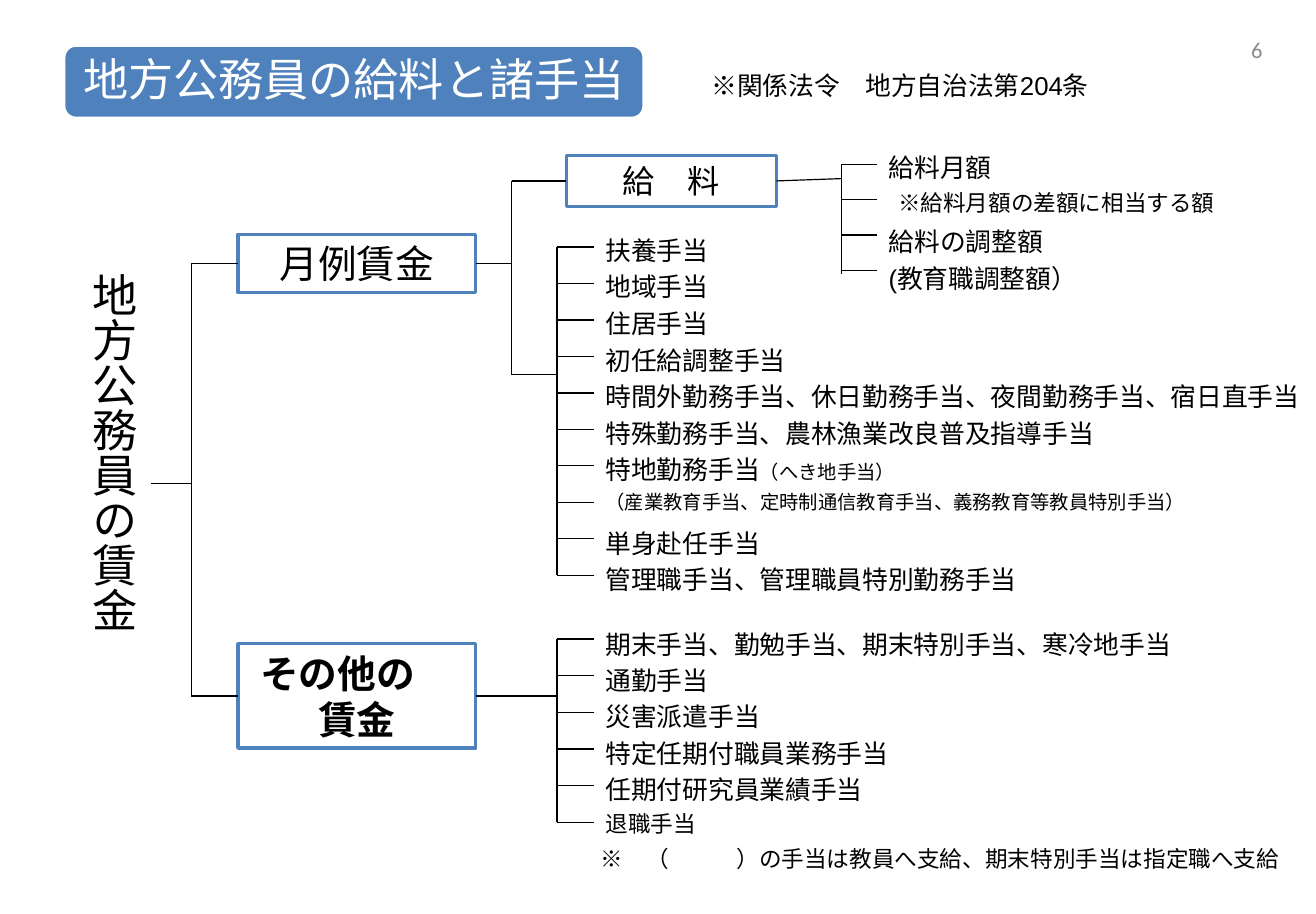
from dataclasses import dataclass
from typing import Optional

from lxml.etree import SubElement
from pptx import Presentation
from pptx.dml.color import RGBColor
from pptx.enum.shapes import MSO_CONNECTOR, MSO_SHAPE
from pptx.enum.text import MSO_ANCHOR, PP_ALIGN
from pptx.oxml.ns import qn
from pptx.shapes.autoshape import Shape
from pptx.shapes.connector import Connector
from pptx.slide import Slide
from pptx.util import Inches, Pt

BLACK = RGBColor(0x00, 0x00, 0x00)
WHITE = RGBColor(0xFF, 0xFF, 0xFF)
BLUE = RGBColor(0x4F, 0x81, 0xBD)
GRAY = RGBColor(0x8C, 0x8C, 0x8C)
LABEL_HEIGHTS = {16: 0.37, 14: 0.34, 12: 0.3}
LEFT, RIGHT = 1, 3


@dataclass(frozen=True)
class Label:
    text: str
    width: float
    size: int = 16
    indent: float = 0
    remark: str = ""


@dataclass(frozen=True)
class Branch:
    spine_x: float
    spine_end: float
    tick_end: float
    first_tick: float
    last_tick: float
    first_label: float
    last_label: float
    labels: tuple[Label, ...]


@dataclass(frozen=True)
class Category:
    text: str
    left: float
    top: float
    width: float
    height: float
    size: int
    bold: Optional[bool] = None

    @property
    def middle(self) -> float:
        return self.top + self.height / 2


BASE_PAY = Category("給　料", 4.88, 1.34, 1.81, 0.44, 20)
MONTHLY = Category("月例賃金", 2.05, 2.02, 2.05, 0.5, 24)
OTHER = Category("その他の　賃金", 2.05, 5.55, 2.05, 0.9, 24, True)

BRANCHES = (
    Branch(7.25, 2.36, 7.56, 1.42, 2.33, 1.26, 2.21, (
        Label("給料月額", 1.81),
        Label("※給料月額の差額に相当する額", 3.07, 14, 0.08),
        Label("給料の調整額", 1.81),
        Label("(教育職調整額）", 2.44),
    )),
    Branch(4.8, 4.96, 5.12, 2.13, 4.96, 1.97, 4.81, (
        Label("扶養手当", 3.53),
        Label("地域手当", 3.53),
        Label("住居手当", 3.53),
        Label("初任給調整手当", 3.53),
        Label("時間外勤務手当、休日勤務手当、夜間勤務手当、宿日直手当", 6.22),
        Label("特殊勤務手当、農林漁業改良普及指導手当", 6.22),
        Label("特地勤務手当", 5.98, remark="（へき地手当）"),
        Label("（産業教育手当、定時制通信教育手当、義務教育等教員特別手当）", 6.22, 12),
        Label("単身赴任手当", 1.81),
        Label("管理職手当、管理職員特別勤務手当", 5.67),
    )),
    Branch(4.8, 7.09, 5.12, 5.51, 7.09, 5.37, 6.93, (
        Label("期末手当、勤勉手当、期末特別手当、寒冷地手当", 5.75),
        Label("通勤手当", 1.81),
        Label("災害派遣手当", 1.81),
        Label("特定任期付職員業務手当", 3.15),
        Label("任期付研究員業績手当", 3.15),
        Label("退職手当", 1.81, 14),
    )),
)


def write(shape: Shape, text: str, size: int, color: RGBColor = BLACK,
          font: str = "Arial", bold: Optional[bool] = None,
          align: PP_ALIGN = PP_ALIGN.CENTER) -> None:
    """Append one run to the first paragraph of a shape."""
    frame = shape.text_frame
    frame.word_wrap = True
    frame.vertical_anchor = MSO_ANCHOR.MIDDLE
    paragraph = frame.paragraphs[0]
    paragraph.alignment = align
    run = paragraph.add_run()
    run.text = text
    run.font.name = font
    run.font.size = Pt(size)
    run.font.bold = bold
    run.font.color.rgb = color


def add_text(slide: Slide, left: float, top: float, width: float, height: float,
             text: str, size: int, align: PP_ALIGN = PP_ALIGN.CENTER) -> Shape:
    """Add a text box holding one run."""
    box = slide.shapes.add_textbox(Inches(left), Inches(top), Inches(width), Inches(height))
    write(box, text, size, align=align)
    return box


def add_panel(slide: Slide, kind: MSO_SHAPE, left: float, top: float, width: float,
              height: float, fill: RGBColor, line: Optional[RGBColor]) -> Shape:
    """Add a filled shape with an optional outline."""
    panel = slide.shapes.add_shape(kind, Inches(left), Inches(top), Inches(width), Inches(height))
    panel.shadow.inherit = False
    panel.fill.solid()
    panel.fill.fore_color.rgb = fill
    if line is None:
        panel.line.fill.background()
    else:
        panel.line.color.rgb = line
        panel.line.width = Pt(2)
    return panel


def add_category(slide: Slide, category: Category) -> Shape:
    """Add a blue-framed wage category."""
    box = add_panel(slide, MSO_SHAPE.RECTANGLE, category.left, category.top,
                    category.width, category.height, WHITE, BLUE)
    write(box, category.text, category.size, bold=category.bold)
    return box


def add_line(slide: Slide, x1: float, y1: float, x2: float, y2: float) -> Connector:
    """Add a thin black straight connector."""
    line = slide.shapes.add_connector(
        MSO_CONNECTOR.STRAIGHT, Inches(x1), Inches(y1), Inches(x2), Inches(y2))
    line.line.color.rgb = BLACK
    line.line.width = Pt(0.75)
    SubElement(line._element.spPr, qn("a:effectLst"))
    return line


def add_branch(slide: Slide, branch: Branch) -> None:
    """Add a spine with evenly spaced ticks and labels."""
    add_line(slide, branch.spine_x, branch.first_tick, branch.spine_x, branch.spine_end)
    gaps = len(branch.labels) - 1
    for row, label in enumerate(branch.labels):
        tick_y = branch.first_tick + row * (branch.last_tick - branch.first_tick) / gaps
        label_y = branch.first_label + row * (branch.last_label - branch.first_label) / gaps
        add_line(slide, branch.spine_x, tick_y, branch.tick_end, tick_y)
        box = add_text(slide, branch.tick_end + label.indent, label_y, label.width,
                       LABEL_HEIGHTS[label.size], label.text, label.size, PP_ALIGN.LEFT)
        box.text_frame.margin_right = 0
        if label.remark:
            write(box, label.remark, 12, align=PP_ALIGN.LEFT)


def main() -> None:
    """Build the wage structure slide."""
    presentation = Presentation()
    presentation.slide_width = Inches(11.34)
    presentation.slide_height = Inches(7.88)
    slide = presentation.slides.add_slide(presentation.slide_layouts[6])

    title = add_panel(slide, MSO_SHAPE.ROUNDED_RECTANGLE, 0.55, 0.39, 5, 0.63, BLUE, WHITE)
    write(title, "地方公務員の給料と諸手当", 28, WHITE, "Calibri")
    title.text_frame.paragraphs[0].line_spacing = 0.9
    page_number = add_panel(slide, MSO_SHAPE.RECTANGLE, 10.58, 0.22, 0.5, 0.41, WHITE, None)
    write(page_number, "6", 14, GRAY, "Calibri")
    add_text(slide, 5.75, 0.55, 4.01, 0.37, "※関係法令　地方自治法第204条", 16)
    root = add_text(slide, 0.64, 2.25, 0.67, 3.78, "地方公務員の賃金", 28)
    root.text_frame._txBody.bodyPr.set("vert", "eaVert")

    base_pay, monthly, other = (
        add_category(slide, category) for category in (BASE_PAY, MONTHLY, OTHER))
    add_line(slide, 1.3, 4.17, 1.65, 4.17)
    add_line(slide, 1.65, MONTHLY.middle, 1.65, OTHER.middle)
    add_line(slide, 4.41, BASE_PAY.middle, 4.41, 3.23)
    add_line(slide, 4.41, 3.23, 4.8, 3.23)
    for x, category, box in ((1.65, MONTHLY, monthly), (1.65, OTHER, other),
                             (4.41, BASE_PAY, base_pay)):
        add_line(slide, x, category.middle, category.left, category.middle).end_connect(box, LEFT)
    for category, box, x, y in ((MONTHLY, monthly, 4.41, MONTHLY.middle),
                                (OTHER, other, 4.8, OTHER.middle),
                                (BASE_PAY, base_pay, 7.25, 1.54)):
        add_line(slide, category.left + category.width, category.middle,
                 x, y).begin_connect(box, RIGHT)

    for branch in BRANCHES:
        add_branch(slide, branch)
    add_text(slide, 5.08, 7.23, 6.26, 0.34,
             "※　（　　　）の手当は教員へ支給、期末特別手当は指定職へ支給", 14, PP_ALIGN.LEFT)
    presentation.save("out.pptx")


if __name__ == "__main__":
    main()
